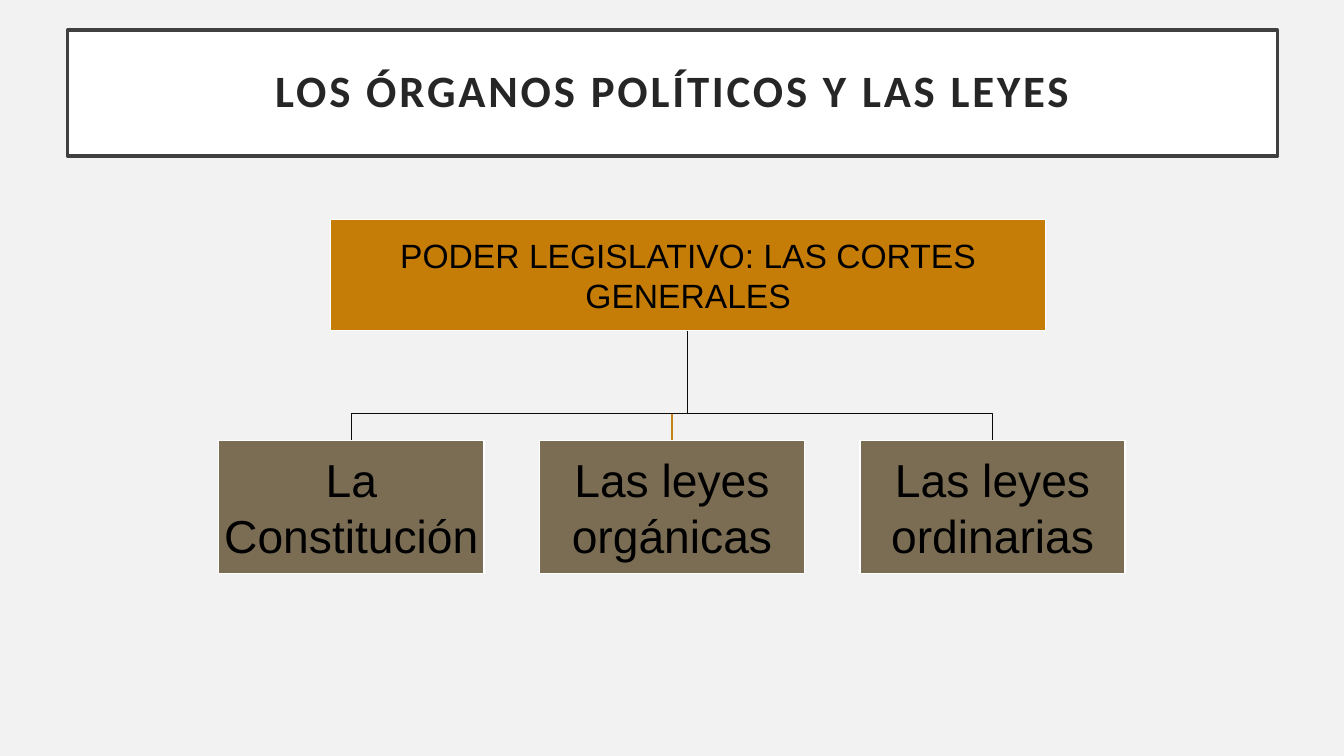
from pptx import Presentation
from pptx import util as u
from pptx.dml.color import RGBColor
from pptx.enum import shapes, text

COLORS = {
    "background": "F2F2F2",
    "white": "FFFFFF",
    "frame": "404040",
    "title": "262626",
    "black": "000000",
    "power": "C67D08",
    "law": "7A6D54",
    "right_branch": "070809",
    "middle_branch": "C58217",
    "left_branch": "0E0C09",
}


class Chart:
    def __init__(self, page):
        self.page = page
        self.font = "Arial"
        self.inset = 0.02
        page.background.fill.solid()
        page.background.fill.fore_color.rgb = self.color("background")

    def color(self, name):
        return RGBColor.from_string(COLORS[name])

    def paint(self, shape, fill, line, width):
        shape.fill.solid()
        shape.fill.fore_color.rgb = self.color(fill)
        shape.line.color.rgb = self.color(line)
        shape.line.width = u.Pt(width)

    def label(self, shape, words, size, font, color, inset):
        frame = shape.text_frame
        frame.word_wrap = True
        frame.auto_size = text.MSO_AUTO_SIZE.NONE
        frame.vertical_anchor = text.MSO_ANCHOR.MIDDLE
        frame.margin_left = frame.margin_right = u.Inches(inset)
        frame.margin_top = frame.margin_bottom = u.Inches(inset)
        para = frame.paragraphs[0]
        para.alignment = text.PP_ALIGN.CENTER
        span = para.add_run()
        span.text = words
        span.font.size = u.Pt(size)
        span.font.name = font
        span.font.color.rgb = self.color(color)
        return para, span

    def title(self, words, left, top, width, height):
        box = self.page.shapes.title
        box.left, box.top = u.Inches(left), u.Inches(top)
        box.width, box.height = u.Inches(width), u.Inches(height)
        self.paint(box, "white", "frame", 2.5)
        para, span = self.label(box, words, 32, "Calibri", "title", 0.2)
        para.line_spacing = 0.9
        span.font.bold = True
        span.font._element.set("spc", "200")

    def box(self, words, left, top, width, height, fill, size):
        box = self.page.shapes.add_shape(
            shapes.MSO_SHAPE.RECTANGLE,
            u.Inches(left), u.Inches(top), u.Inches(width), u.Inches(height))
        box.shadow.inherit = False
        self.paint(box, fill, "white", 1)
        self.label(box, words, size, self.font, "black", self.inset)

    def branch(self, points, color):
        start, *rest = [(u.Inches(x), u.Inches(y)) for x, y in points]
        builder = self.page.shapes.build_freeform(*start)
        builder.add_line_segments(rest, close=False)
        branch = builder.convert_to_shape()
        branch.shadow.inherit = False
        branch.fill.background()
        branch.line.color.rgb = self.color(color)
        branch.line.width = u.Pt(1)


def main():
    deck = Presentation()
    deck.slide_width, deck.slide_height = u.Inches(13.33), u.Inches(7.5)
    chart = Chart(deck.slides.add_slide(deck.slide_layouts[5]))
    chart.title("LOS ÓRGANOS POLÍTICOS Y LAS LEYES", 0.67, 0.3, 12, 1.25)

    root_left, root_top, root_width, root_height = 3.28, 2.18, 7.09, 1.1
    law_left, law_top, law_width, law_height, law_step = 2.17, 4.37, 2.63, 1.32, 3.18
    root_center, root_bottom, bend = 6.82, root_top + root_height, 4.1
    laws = [
        ("La Constitución", "left_branch"),
        ("Las leyes orgánicas", "middle_branch"),
        ("Las leyes ordinarias", "right_branch"),
    ]
    lefts = [law_left + index * law_step for index in range(len(laws))]

    for left, (_, color) in reversed(list(zip(lefts, laws))):
        center = left + law_width / 2
        chart.branch([(root_center, root_bottom), (root_center, bend),
                      (center, bend), (center, law_top)], color)

    chart.box("PODER LEGISLATIVO: LAS CORTES GENERALES",
              root_left, root_top, root_width, root_height, "power", 24)
    for left, (words, _) in zip(lefts, laws):
        chart.box(words, left, law_top, law_width, law_height, "law", 33)

    deck.save("out.pptx")


if __name__ == "__main__":
    main()
